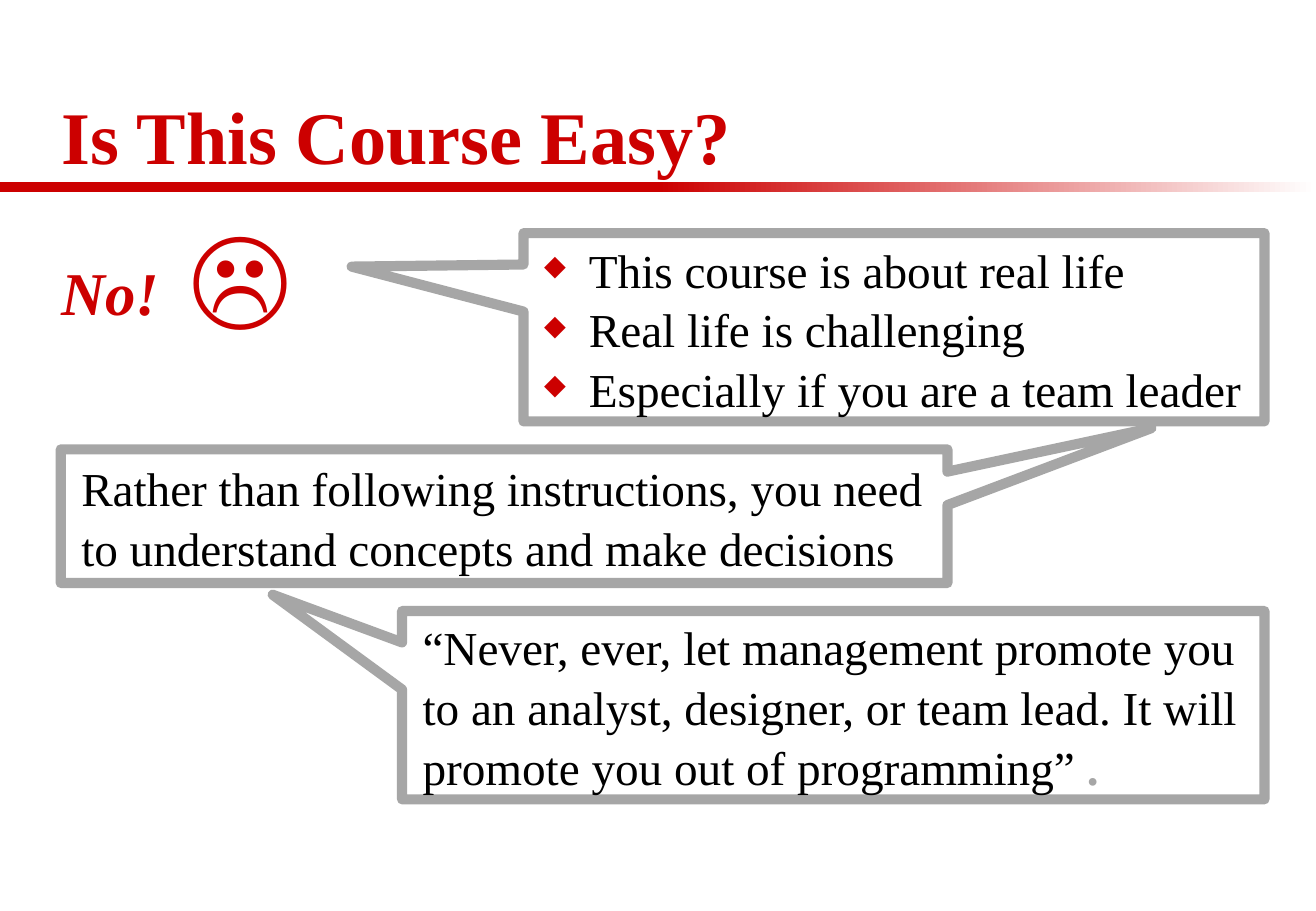
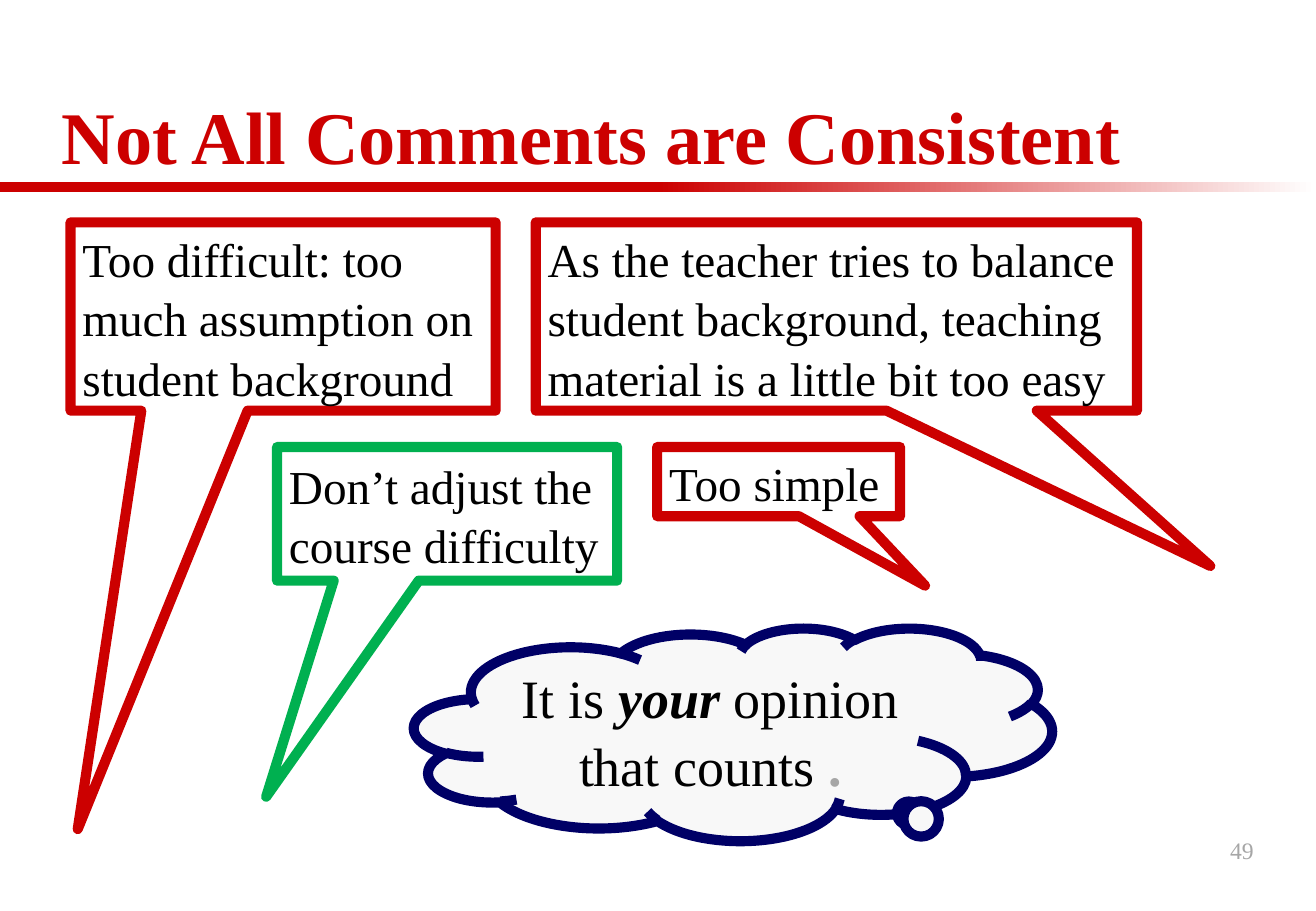
"""Build two slides about course difficulty, with shared title, band and callout styles."""
from dataclasses import dataclass

from lxml.etree import SubElement
from pptx import Presentation
from pptx.dml.color import RGBColor
from pptx.enum.shapes import MSO_SHAPE
from pptx.enum.text import MSO_ANCHOR, MSO_AUTO_SIZE, PP_ALIGN
from pptx.oxml.ns import qn
from pptx.util import Pt


@dataclass(frozen=True)
class Theme:
    font: str = "Times New Roman"
    red: RGBColor = RGBColor(0xCC, 0x00, 0x00)
    green: RGBColor = RGBColor(0x00, 0xB0, 0x50)
    navy: RGBColor = RGBColor(0x00, 0x00, 0x66)
    grey: RGBColor = RGBColor(0xA6, 0xA6, 0xA6)
    mist: RGBColor = RGBColor(0xF8, 0xF8, 0xF8)
    white: RGBColor = RGBColor(0xFF, 0xFF, 0xFF)
    black: RGBColor = RGBColor(0x00, 0x00, 0x00)
    title: int = 44
    answer: int = 36
    face: int = 66
    body: int = 28
    cloud: int = 32
    number: int = 14
    outline: int = 6


theme = Theme()


def write(frame, paragraphs, size, color, bold=False, italic=False, align=PP_ALIGN.LEFT,
          anchor=MSO_ANCHOR.MIDDLE, spacing=1.05, bullets=False):
    frame.word_wrap = True
    frame.auto_size = MSO_AUTO_SIZE.NONE
    frame.vertical_anchor = anchor
    for index, runs in enumerate(paragraphs):
        paragraph = frame.add_paragraph() if index else frame.paragraphs[0]
        if bullets:
            properties = paragraph._p.get_or_add_pPr()
            properties.set("marL", str(Pt(31.7)))
            properties.set("indent", str(-Pt(26.6)))
            bullet_color = SubElement(properties, qn("a:buClr"))
            SubElement(bullet_color, qn("a:srgbClr"), val=str(theme.red))
            SubElement(properties, qn("a:buSzPct"), val="60000")
            SubElement(properties, qn("a:buChar"), char="◆")
        paragraph.alignment = align
        paragraph.line_spacing = spacing
        font = paragraph.font
        font.name, font.size, font.bold, font.italic = theme.font, Pt(size), bold, italic
        font.color.rgb = color
        for text, changes in runs:
            run = paragraph.add_run()
            run.text = text
            for key, value in changes.items():
                if key == "color":
                    run.font.color.rgb = value
                else:
                    setattr(run.font, key, value)


def add_outlined(slide, preset, box, fill, line, width=0):
    shape = slide.shapes.add_shape(preset, *map(Pt, box))
    shape.shadow.inherit = False
    if fill is None:
        shape.fill.background()
    else:
        shape.fill.solid()
        shape.fill.fore_color.rgb = fill
    if line is None:
        shape.line.fill.background()
    else:
        shape.line.color.rgb = line
        shape.line.width = Pt(width)
    return shape


deck = Presentation()
deck.slide_width, deck.slide_height = Pt(780), Pt(540)

slides = []
for heading in ("Is This Course Easy?", "Not All Comments are Consistent"):
    slide = deck.slides.add_slide(deck.slide_layouts[5])
    slides.append(slide)
    add_outlined(slide, MSO_SHAPE.RECTANGLE, (0, 108, 390, 5.8), theme.red, None)
    fading_band = add_outlined(slide, MSO_SHAPE.RECTANGLE, (390, 108, 390, 5.8), None, None)
    fading_band.fill.gradient()
    fading_band.fill.gradient_angle = 0
    for stop, color in zip(fading_band.fill.gradient_stops, (theme.red, theme.white)):
        stop.color.rgb = color
    title = slide.shapes.title
    title.left, title.top, title.width, title.height = map(Pt, (29.5, 23.8, 720, 87.1))
    write(title.text_frame, [[(heading, {})]], theme.title, theme.red, bold=True,
          anchor=MSO_ANCHOR.BOTTOM, spacing=0.9)
course, comments = slides

answer = course.shapes.add_textbox(*map(Pt, (29.5, 113.8, 720, 90)))
write(answer.text_frame,
      [[("No!\u00a0 ", {}),
        ("☹", {"size": Pt(theme.face), "bold": False, "italic": False})]],
      theme.answer, theme.red, bold=True, italic=True, anchor=MSO_ANCHOR.TOP)

page_number = comments.shapes.add_textbox(*map(Pt, (587.5, 486, 162.7, 36)))
write(page_number.text_frame, [[("49", {})]], theme.number, theme.grey,
      align=PP_ALIGN.RIGHT, spacing=1.0)

end_mark = {"color": theme.grey, "bold": True}
reasons = [[("This course is about real life", {})],
           [("Real life is challenging", {})],
           [("Especially if you are a team leader", {})]]
advice = [[("Rather than following instructions, you need to understand concepts "
            "and make decisions", {})]]
quotation = [[("“Never, ever, let management promote you to an analyst, designer, or team "
               "lead. It will promote you out of programming”", {}), (" .", end_mark)]]
steady = [[("Don’t adjust the course difficulty", {})]]
difficult = [[("Too difficult: too much assumption on student background", {})]]
easy = [[("As the teacher tries to balance student background, teaching material is "
          "a little bit too easy", {})]]
simple = [[("Too simple", {})]]

callouts = [
    (course, (310.3, 138.2, 439.2, 111.6), (-0.732, -0.322), None, theme.grey, 7.2, reasons),
    (course, (36, 266.4, 525.6, 79.2), (0.73, -0.659), theme.white, theme.grey, 12.2, advice),
    (course, (238.3, 362.2, 511.2, 111.6), (-0.65, -0.587), theme.white, theme.grey, 12.2,
     quotation),
    (comments, (164.2, 265, 201.6, 79.2), (-0.532, 2.118), None, theme.green, 7.2, steady),
    (comments, (41.8, 131.8, 252, 111.6), (-0.483, 2.723), None, theme.red, 7.2, difficult),
    (comments, (317.5, 131.8, 356.4, 111.6), (0.622, 1.325), None, theme.red, 7.2, easy),
    (comments, (389.5, 265, 144, 41), (0.603, 1.505), None, theme.red, 7.2, simple),
]
for slide, box, tail, fill, line, margin, paragraphs in callouts:
    callout = add_outlined(slide, MSO_SHAPE.RECTANGULAR_CALLOUT, box, fill, line, theme.outline)
    callout.adjustments[0], callout.adjustments[1] = tail
    callout.text_frame.margin_left = Pt(margin)
    write(callout.text_frame, paragraphs, theme.body, theme.black, bullets=paragraphs is reasons)

opinion = add_outlined(comments, MSO_SHAPE.CLOUD_CALLOUT, (245.5, 372.2, 378, 126),
                       theme.mist, theme.navy, theme.outline)
opinion.adjustments[0], opinion.adjustments[1] = 0.273, 0.369
write(opinion.text_frame,
      [[("It is", {}), (" your ", {"bold": True, "italic": True}),
        ("opinion that counts ", {}), (".", end_mark)]],
      theme.cloud, theme.black, align=PP_ALIGN.CENTER)

deck.save("out.pptx")
